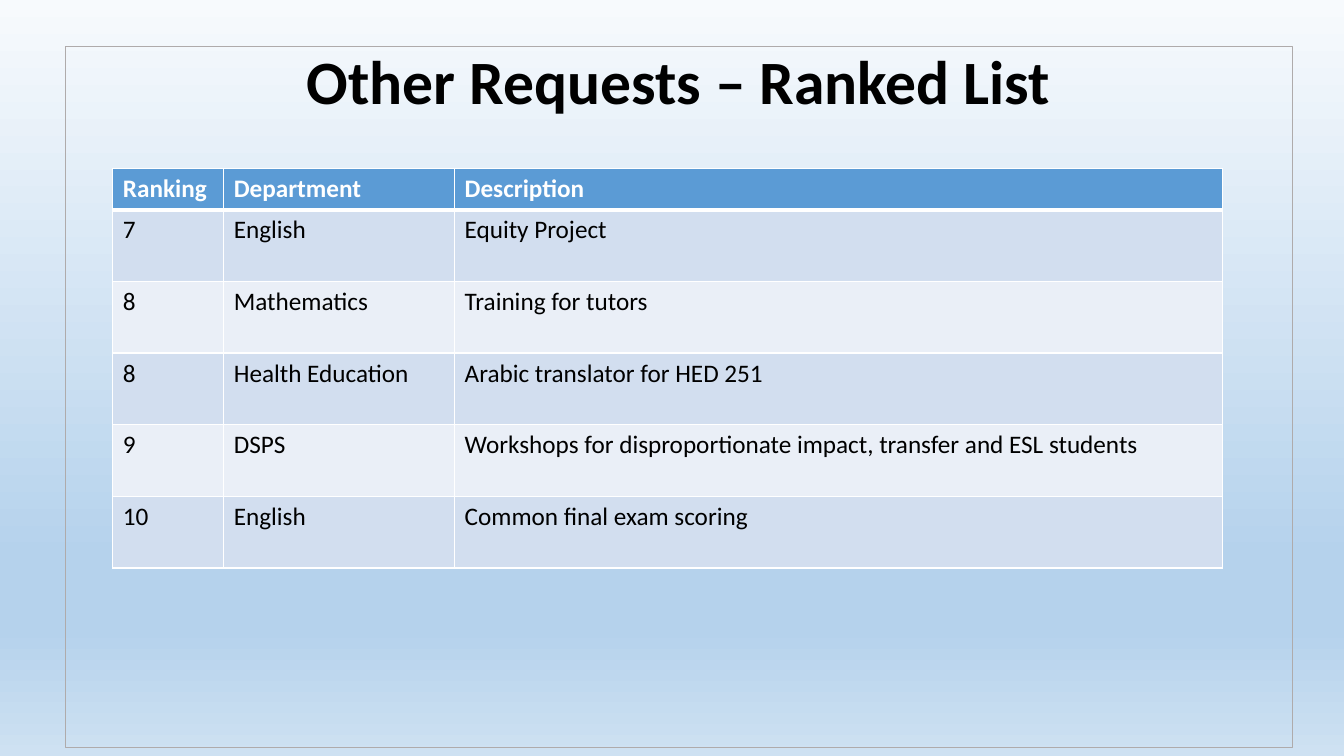
"""Build the ranked list of other requests as a one-slide presentation."""
import dataclasses
import typing

import lxml.etree
import pptx
import pptx.dml.color
import pptx.enum.text
import pptx.oxml
import pptx.oxml.ns
import pptx.presentation
import pptx.slide
import pptx.table
import pptx.util


@dataclasses.dataclass(frozen=True)
class Theme:
    font: str = "Calibri"
    title_size: int = 44
    table_size: int = 18
    text: str = "000000"
    light: str = "FFFFFF"
    frame: str = "AFABAB"
    header: str = "5B9BD5"
    bands: tuple[str, str] = ("D2DEEF", "EAEFF7")
    gradient: tuple[tuple[int, str], ...] = (
        (0, "F7FAFD"), (74, "B5D2EC"), (83, "B5D2EC"), (100, "CEE1F2"))
    thin: int = 1
    thick: int = 3


class Request(typing.NamedTuple):
    ranking: str
    department: str
    description: str


class Area(typing.NamedTuple):
    left: float
    top: float
    width: float
    height: float


THEME = Theme()
SLIDE_WIDTH = pptx.util.Inches(13.33)
SLIDE_HEIGHT = pptx.util.Inches(7.5)
TITLE_AREA = Area(4.88, 6.13, 91.3, 92.8)
TABLE_LEFT, TABLE_TOP = 8.4, 22.27
COLUMN_WIDTHS = (8.25, 17.18, 57.16)
HEADER_HEIGHT, BODY_HEIGHT = 5.49, 9.48
HEADER = Request("Ranking", "Department", "Description")
REQUESTS = (
    Request("7", "English", "Equity Project"),
    Request("8", "Mathematics", "Training for tutors"),
    Request("8", "Health Education", "Arabic translator for HED 251"),
    Request("9", "DSPS", "Workshops for disproportionate impact, transfer and ESL students"),
    Request("10", "English", "Common final exam scoring"),
)


def across(percent: float) -> pptx.util.Emu:
    return pptx.util.Emu(round(SLIDE_WIDTH * percent / 100))


def down(percent: float) -> pptx.util.Emu:
    return pptx.util.Emu(round(SLIDE_HEIGHT * percent / 100))


def rgb(color: str) -> pptx.dml.color.RGBColor:
    return pptx.dml.color.RGBColor.from_string(color)


def add_run(paragraph, text: str, size: int, color: str, bold: bool) -> None:
    run = paragraph.add_run()
    run.text = text
    run.font.name = THEME.font
    run.font.size = pptx.util.Pt(size)
    run.font.bold = bold
    run.font.color.rgb = rgb(color)


def add_color(parent: lxml.etree._Element, color: str) -> None:
    element = lxml.etree.SubElement(parent, pptx.oxml.ns.qn("a:srgbClr"))
    element.set("val", color)


def paint_background(slide: pptx.slide.Slide) -> None:
    fill = slide.background.fill
    fill.gradient()
    fill.gradient_angle = 270
    stops = slide.element.find(".//" + pptx.oxml.ns.qn("a:gsLst"))
    for stop in list(stops):
        stops.remove(stop)
    for percent, color in THEME.gradient:
        stop = lxml.etree.SubElement(stops, pptx.oxml.ns.qn("a:gs"))
        stop.set("pos", str(percent * 1000))
        add_color(stop, color)


def write_title(slide: pptx.slide.Slide, text: str) -> None:
    title = slide.shapes.title
    title.left, title.top = across(TITLE_AREA.left), down(TITLE_AREA.top)
    title.width, title.height = across(TITLE_AREA.width), down(TITLE_AREA.height)
    title.line.color.rgb = rgb(THEME.frame)
    title.line.width = pptx.util.Pt(0.75)
    frame = title.text_frame
    frame.auto_size = pptx.enum.text.MSO_AUTO_SIZE.NONE
    frame.vertical_anchor = pptx.enum.text.MSO_ANCHOR.TOP
    paragraph = frame.paragraphs[0]
    paragraph.alignment = pptx.enum.text.PP_ALIGN.CENTER
    paragraph.line_spacing = 0.9
    paragraph.space_before = pptx.util.Pt(10)
    add_run(paragraph, text, THEME.title_size, THEME.text, True)


def add_borders(cell: pptx.table._Cell, top: int, bottom: int) -> None:
    properties = cell._tc.get_or_add_tcPr()
    widths = {"a:lnL": THEME.thin, "a:lnR": THEME.thin, "a:lnT": top, "a:lnB": bottom}
    for tag, width in widths.items():
        line = lxml.etree.SubElement(properties, pptx.oxml.ns.qn(tag))
        line.set("w", str(pptx.util.Pt(width)))
        add_color(lxml.etree.SubElement(line, pptx.oxml.ns.qn("a:solidFill")), THEME.light)


def add_request_table(slide: pptx.slide.Slide) -> None:
    rows = (HEADER, *REQUESTS)
    heights = (HEADER_HEIGHT, *[BODY_HEIGHT] * len(REQUESTS))
    table = slide.shapes.add_table(
        len(rows), len(COLUMN_WIDTHS), across(TABLE_LEFT), down(TABLE_TOP),
        across(sum(COLUMN_WIDTHS)), down(sum(heights))).table
    for column, width in zip(table.columns, COLUMN_WIDTHS):
        column.width = across(width)
    for index, (request, height) in enumerate(zip(rows, heights)):
        is_header = index == 0
        table.rows[index].height = down(height)
        fill = THEME.header if is_header else THEME.bands[(index - 1) % 2]
        color = THEME.light if is_header else THEME.text
        top = THEME.thick if index == 1 else THEME.thin
        bottom = THEME.thick if is_header else THEME.thin
        for cell, text in zip(table.rows[index].cells, request):
            add_borders(cell, top, bottom)
            cell.fill.solid()
            cell.fill.fore_color.rgb = rgb(fill)
            add_run(cell.text_frame.paragraphs[0], text, THEME.table_size, color, is_header)


def main() -> None:
    presentation = pptx.Presentation()
    presentation.slide_width = SLIDE_WIDTH
    presentation.slide_height = SLIDE_HEIGHT
    slide = presentation.slides.add_slide(presentation.slide_layouts.get_by_name("Title Only"))
    paint_background(slide)
    write_title(slide, "Other Requests – Ranked List")
    add_request_table(slide)
    presentation.save("out.pptx")


if __name__ == "__main__":
    main()
